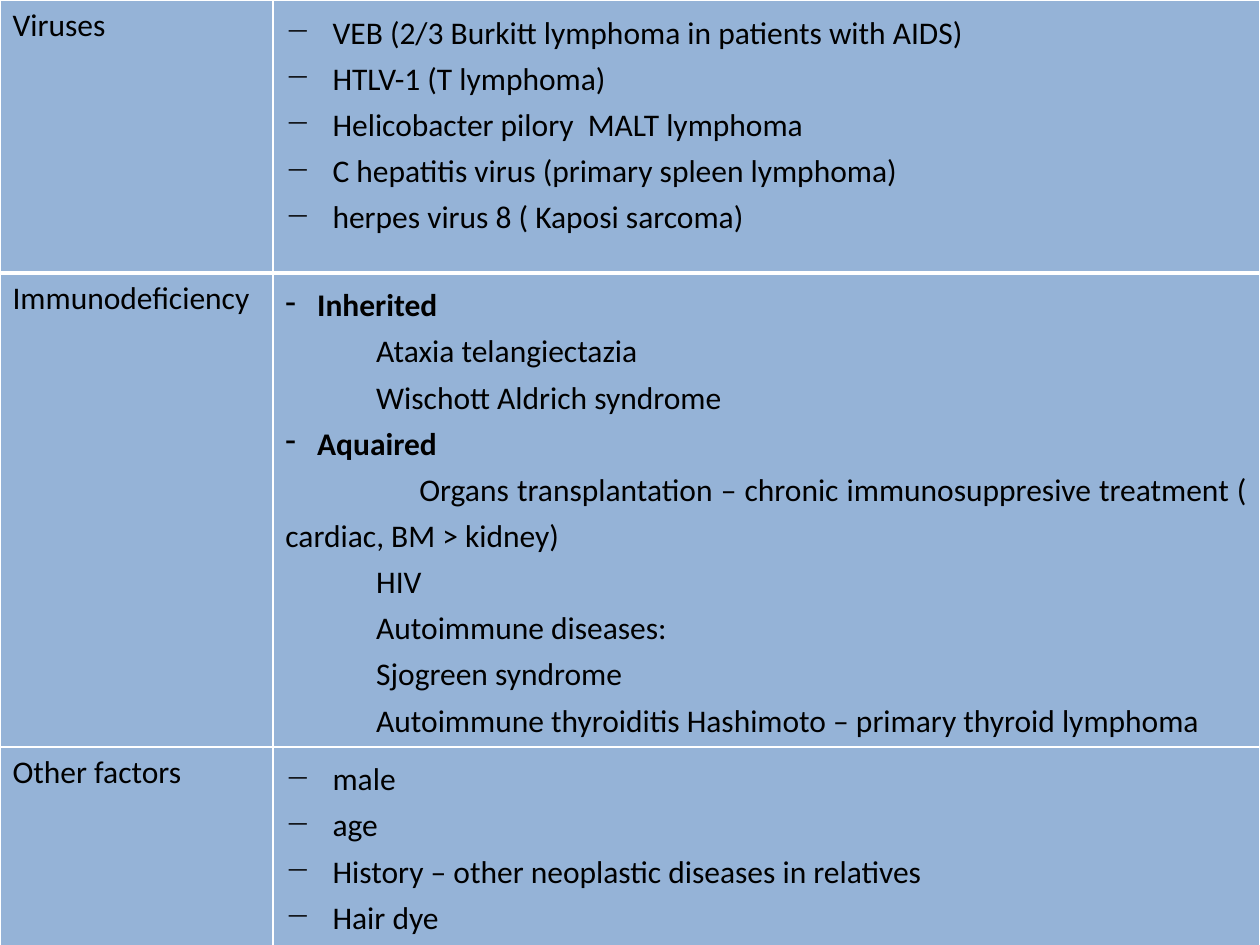
from lxml.etree import SubElement
from pptx import Presentation
from pptx.dml.color import RGBColor
from pptx.enum.text import PP_ALIGN
from pptx.oxml.ns import qn
from pptx.util import Cm, Pt

FONT = "Calibri"
BLACK, WHITE, BLUE = "000000", "FFFFFF", "95B3D7"
DASH, GROUP, SUB, WRAPPED = "dash", "group", "sub", "wrapped"
STYLES = {
    DASH: (Cm(0.95), Cm(-0.95), "−"),
    GROUP: (Cm(0.64), Cm(-0.64), "-"),
    SUB: (Cm(0), Cm(1.83), None),
    WRAPPED: (Cm(0), Cm(2.7), None),
}
ROWS = [
    ("Viruses", Cm(5.5), [
        (DASH, "VEB (2/3 Burkitt lymphoma in patients with AIDS)"),
        (DASH, "HTLV-1 (T lymphoma)"),
        (DASH, "Helicobacter pilory  MALT lymphoma"),
        (DASH, "C hepatitis virus (primary spleen lymphoma)"),
        (DASH, "herpes virus 8 ( Kaposi sarcoma)"),
    ]),
    ("Immunodeficiency", Cm(9.1), [
        (GROUP, "Inherited"),
        (SUB, "Ataxia telangiectazia"),
        (SUB, "Wischott Aldrich syndrome"),
        (GROUP, "Aquaired"),
        (WRAPPED, "Organs transplantation – chronic immunosuppresive treatment ( cardiac, BM > kidney)"),
        (SUB, "HIV"),
        (SUB, "Autoimmune diseases:"),
        (SUB, "Sjogreen syndrome"),
        (SUB, "Autoimmune thyroiditis Hashimoto – primary thyroid lymphoma"),
    ]),
    ("Other factors", Cm(6.35), [
        (DASH, "male"),
        (DASH, "age"),
        (DASH, "History – other neoplastic diseases in relatives"),
        (DASH, "Hair dye"),
    ]),
]


def rgb(color):
    return RGBColor.from_string(color)


def format_font(p, bold=False):
    for r in p.runs:
        r.font.name = FONT
        r.font.size = Pt(18)
        r.font.bold = bold
        r.font.color.rgb = rgb(BLACK)


def format_item(p, style):
    margin, indent, bullet = STYLES[style]
    p.alignment = PP_ALIGN.JUSTIFY
    p.line_spacing = 1.2
    pPr = p._p.get_or_add_pPr()
    pPr.set("marL", str(int(margin)))
    pPr.set("indent", str(int(indent)))
    if bullet:
        SubElement(pPr, qn("a:buChar"), char=bullet)
    else:
        SubElement(pPr, qn("a:buNone"))
    format_font(p, style == GROUP)


def style_cell(cell, top, bottom):
    tcPr = cell._tc.get_or_add_tcPr()
    for side, width in (("L", 1), ("R", 1), ("T", top), ("B", bottom)):
        ln = SubElement(tcPr, qn(f"a:ln{side}"), w=str(int(Pt(width))))
        fill = SubElement(ln, qn("a:solidFill"))
        SubElement(fill, qn("a:srgbClr"), val=WHITE)
    cell.fill.solid()
    cell.fill.fore_color.rgb = rgb(BLUE)


def fill_items(cell, items):
    tf = cell.text_frame
    tf.text = "\n".join(text for _, text in items)
    for p, (style, _) in zip(tf.paragraphs, items):
        format_item(p, style)


def add_factors_table(s):
    height = sum(h for _, h, _ in ROWS)
    table = s.shapes.add_table(len(ROWS), 2, Cm(0), Cm(0), Cm(25.4), height).table
    table.first_row = False
    table.horz_banding = False
    table.columns[0].width = Cm(5.5)
    table.columns[1].width = Cm(19.9)
    for i, (label, row_height, items) in enumerate(ROWS):
        table.rows[i].height = row_height
        head, body = table.rows[i].cells
        for cell in (head, body):
            style_cell(cell, 3 if i == 1 else 1, 3 if i == 0 else 1)
        head.text_frame.text = label
        format_font(head.text_frame.paragraphs[0])
        fill_items(body, items)


def main():
    prs = Presentation()
    prs.slide_width, prs.slide_height = Cm(25.4), Cm(19.05)
    s = prs.slides.add_slide(prs.slide_layouts[6])
    add_factors_table(s)
    prs.save("out.pptx")


if __name__ == "__main__":
    main()
